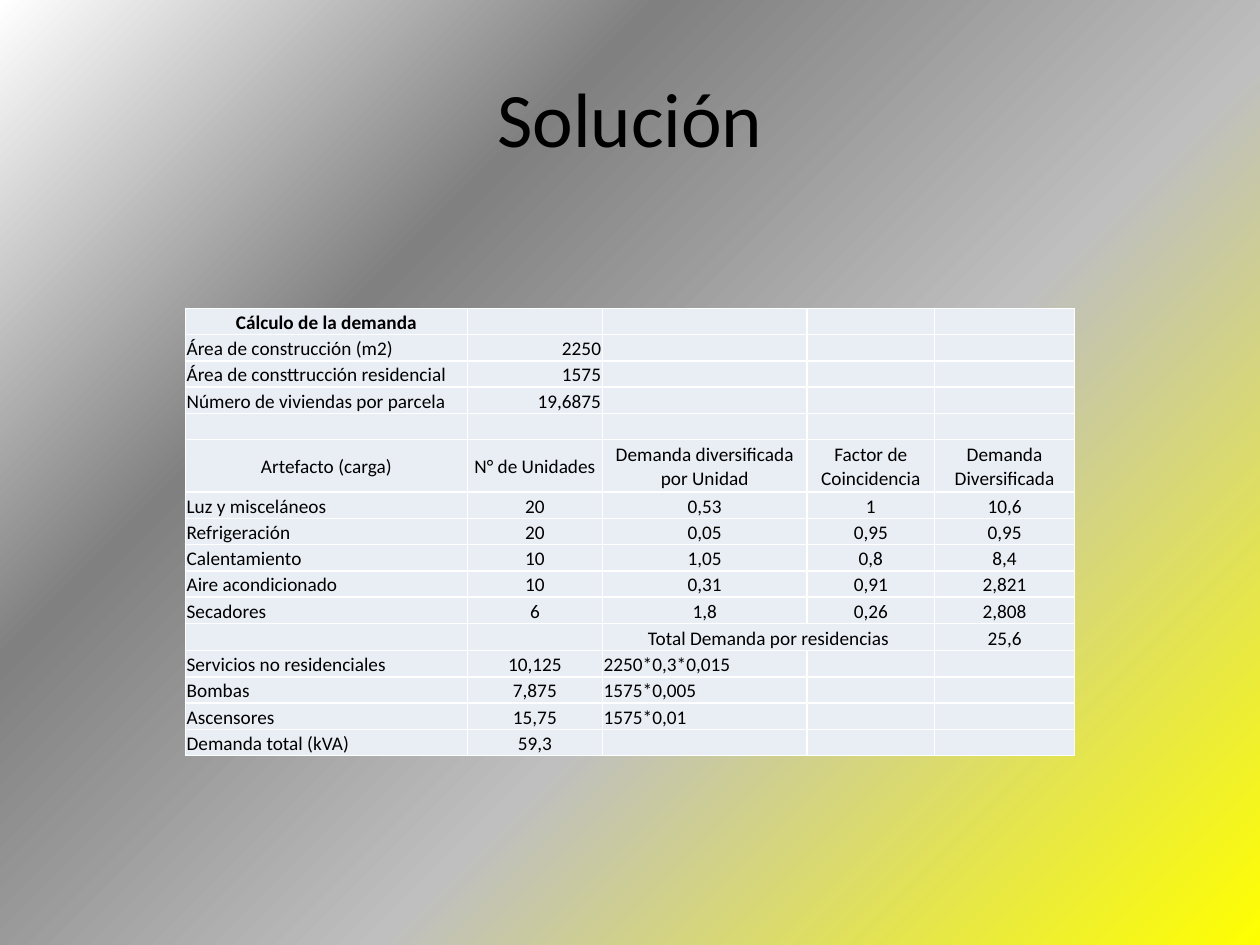
from lxml.etree import SubElement
from pptx import Presentation
from pptx.dml.color import RGBColor
from pptx.enum.text import MSO_ANCHOR as Anchor, PP_ALIGN as Align
from pptx.oxml import parse_xml
from pptx.oxml.ns import nsdecls, qn
from pptx.util import Pt

PX = 1905  # EMU per px, 480 px to the inch
FONT = "Calibri"
BLACK = RGBColor(0x00, 0x00, 0x00)
WHITE = RGBColor(0xFF, 0xFF, 0xFF)
PALE_BLUE = RGBColor(0xE9, 0xED, 0xF4)
YELLOW = RGBColor(0xFF, 0xFF, 0x00)
LIGHT_GREY = RGBColor(0xBF, 0xBF, 0xBF)
GREY = RGBColor(0x80, 0x80, 0x80)

GRADIENT = [(0, YELLOW), (40, LIGHT_GREY), (70, GREY), (100, WHITE)]
COLUMN_WIDTHS = [1075, 514, 780, 486, 533]
ROW_HEIGHT = 100
HEADER_ROW, TOTAL_ROW = 5, 11
SPECIAL_HEIGHTS = {HEADER_ROW: 200, TOTAL_ROW: 104}
INSET = 5
ROWS = [
    ["Cálculo de la demanda"],
    ["Área de construcción (m2)", "2250"],
    ["Área de consttrucción residencial", "1575"],
    ["Número de viviendas por parcela", "19,6875"],
    [],
    ["Artefacto (carga)", "N° de Unidades", "Demanda diversificada por Unidad",
     "Factor de Coincidencia", "Demanda Diversificada"],
    ["Luz y misceláneos", "20", "0,53", "1", "10,6"],
    ["Refrigeración", "20", "0,05", "0,95", "0,95"],
    ["Calentamiento", "10", "1,05", "0,8", "8,4"],
    ["Aire acondicionado", "10", "0,31", "0,91", "2,821"],
    ["Secadores", "6", "1,8", "0,26", "2,808"],
    ["", "", "Total Demanda por residencias", "", "25,6"],
    ["Servicios no residenciales", "10,125", "2250*0,3*0,015"],
    ["Bombas", "7,875", "1575*0,005"],
    ["Ascensores", "15,75", "1575*0,01"],
    ["Demanda total (kVA)", "59,3"],
]


def set_background(slide):
    stops = "".join(
        f'<a:gs pos="{position * 1000}"><a:srgbClr val="{color}"/></a:gs>'
        for position, color in GRADIENT)
    background = parse_xml(
        f'<p:bg {nsdecls("p", "a")}><p:bgPr><a:gradFill rotWithShape="1">'
        f'<a:gsLst>{stops}</a:gsLst><a:path path="circle">'
        '<a:fillToRect l="100000" t="100000"/></a:path></a:gradFill>'
        '<a:effectLst/></p:bgPr></p:bg>')
    slide.element.cSld.insert(0, background)


def format_runs(paragraph, size, bold=False):
    for run in paragraph.runs:
        run.font.name = FONT
        run.font.size = Pt(size)
        run.font.bold = bold
        run.font.color.rgb = BLACK


def add_title(slide, left, top, width, height):
    title = slide.shapes.title
    title.left, title.top = left * PX, top * PX
    title.width, title.height = width * PX, height * PX
    title.text_frame.text = "Solución"
    title.text_frame.vertical_anchor = Anchor.MIDDLE
    paragraph = title.text_frame.paragraphs[0]
    paragraph.alignment = Align.CENTER
    format_runs(paragraph, 44)


def cell_alignment(row, column):
    if row in (0, HEADER_ROW):
        return Align.CENTER
    if column == 0 or (column == 2 and row > TOTAL_ROW):
        return Align.LEFT
    return Align.RIGHT if row < HEADER_ROW else Align.CENTER


def style_cell(cell):
    cell.margin_left = cell.margin_right = cell.margin_top = INSET * PX
    cell.margin_bottom = 0
    # White borders, which come before the fill
    properties = cell._tc.get_or_add_tcPr()
    for side in ("a:lnL", "a:lnR", "a:lnT", "a:lnB"):
        line = SubElement(properties, qn(side), w=str(Pt(1)))
        fill = SubElement(line, qn("a:solidFill"))
        SubElement(fill, qn("a:srgbClr"), val=str(WHITE))
    cell.fill.solid()
    cell.fill.fore_color.rgb = PALE_BLUE


def add_demand_table(slide, left, top):
    heights = [SPECIAL_HEIGHTS.get(row, ROW_HEIGHT) for row in range(len(ROWS))]
    table = slide.shapes.add_table(
        len(ROWS), len(COLUMN_WIDTHS), left * PX, top * PX,
        sum(COLUMN_WIDTHS) * PX, sum(heights) * PX).table
    table.first_row = table.horz_banding = False
    for column, width in zip(table.columns, COLUMN_WIDTHS):
        column.width = width * PX
    for row, height in zip(table.rows, heights):
        row.height = height * PX

    for row, texts in enumerate(ROWS):
        for column in range(len(COLUMN_WIDTHS)):
            cell = table.cell(row, column)
            style_cell(cell)
            cell.vertical_anchor = Anchor.MIDDLE if row == HEADER_ROW else Anchor.BOTTOM
            paragraph = cell.text_frame.paragraphs[0]
            if column < len(texts) and texts[column]:
                paragraph.text = texts[column]
                paragraph.alignment = cell_alignment(row, column)
                format_runs(paragraph, 11, bold=row == 0)
            else:
                # Keeps empty rows as low as the others
                SubElement(paragraph._p, qn("a:endParaRPr"), sz="1100")
    table.cell(TOTAL_ROW, 2).merge(table.cell(TOTAL_ROW, 3))


def main():
    presentation = Presentation()
    presentation.slide_width, presentation.slide_height = 4800 * PX, 3600 * PX
    slide = presentation.slides.add_slide(presentation.slide_layouts[5])
    set_background(slide)
    add_title(slide, 240, 144, 4320, 600)
    add_demand_table(slide, 706, 1175)
    presentation.save("out.pptx")


if __name__ == "__main__":
    main()
